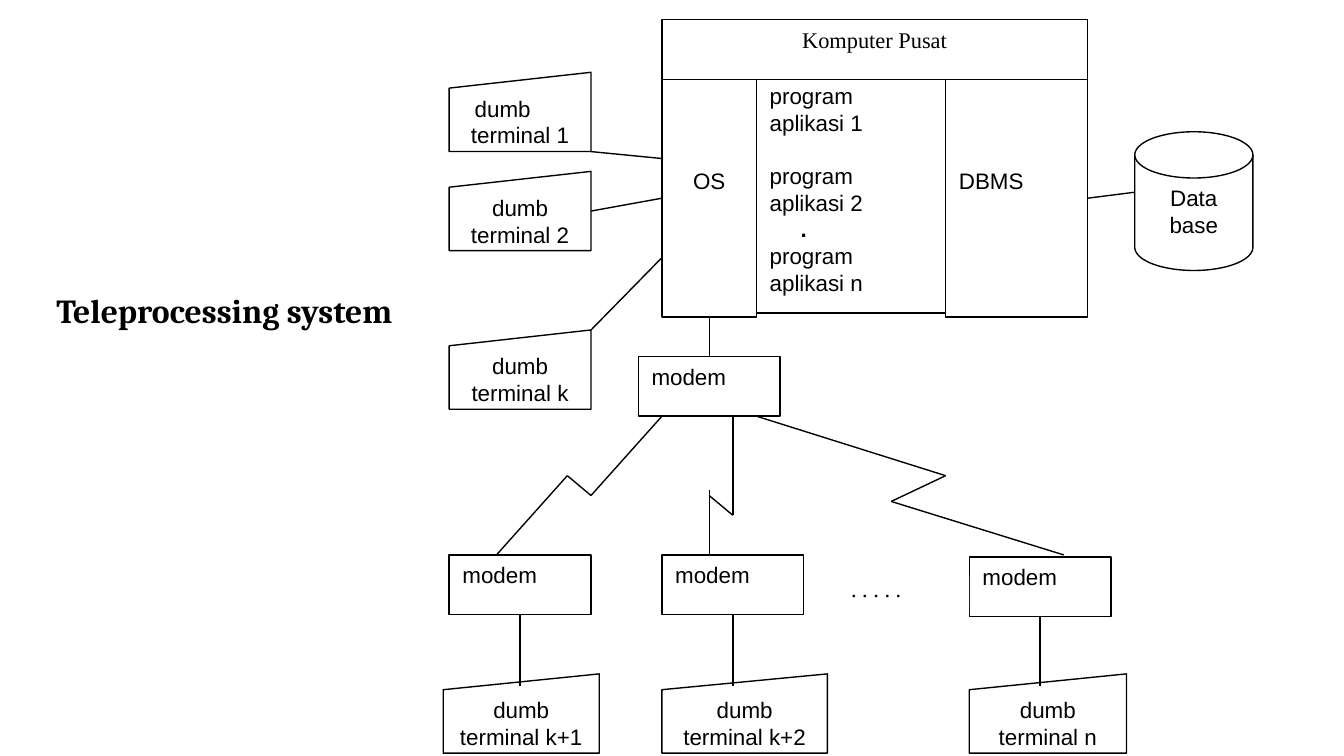
"""Build the teleprocessing system diagram slide."""
from lxml.etree import SubElement
from pptx import Presentation
from pptx.dml.color import RGBColor as RGB
from pptx.enum.shapes import MSO_CONNECTOR as CONN, MSO_SHAPE as SHAPE
from pptx.enum.text import MSO_ANCHOR as ANCHOR, PP_ALIGN as ALIGN
from pptx.oxml.ns import qn
from pptx.util import Inches, Pt

WIDTH = Inches(10)
HEIGHT = WIDTH * 9 // 16
COL, ROW = WIDTH / 56.85, HEIGHT / 38.14
COLORS = {"ink": "000000", "paper": "FFFFFF"}
TOP, LEFT, BOTTOM, RIGHT = range(4)


def color(name):
    """Return the named colour."""
    return RGB.from_string(COLORS[name])


def place(col, row):
    """Turn a grid position into slide lengths."""
    return round(col * COL), round(row * ROW)


def write(tf, lines, font="Arial", size=12, bold=False, align=ALIGN.LEFT,
          anchor=ANCHOR.TOP, insets=(0.1, 0.05), top=None, indents=None, gaps=None, bolds=()):
    """Fill a text frame; indents, gaps and bolds go by line number."""
    tf.word_wrap = True
    tf.vertical_anchor = anchor
    tf.margin_left = tf.margin_right = Inches(insets[0])
    tf.margin_top = Inches(insets[1] if top is None else top)
    tf.margin_bottom = Inches(insets[1])
    for i, line in enumerate(lines):
        p = tf.add_paragraph() if i else tf.paragraphs[0]
        p.alignment = align
        p.space_before = Pt((gaps or {}).get(i, 0))
        if i in (indents or {}):
            p.alignment = ALIGN.LEFT
            p._p.get_or_add_pPr().set("marL", str(Inches(indents[i])))
        r = p.add_run()
        r.text = line
        r.font.name, r.font.size = font, Pt(size)
        r.font.bold = bold or i in bolds
        r.font.color.rgb = color("ink")


def add_box(s, col, row, cols, rows, lines, kind=SHAPE.RECTANGLE, border=True, **style):
    """Add a white outlined shape with text on the grid."""
    sp = s.shapes.add_shape(kind, *place(col, row), *place(cols, rows))
    sp.shadow.inherit = False
    sp.fill.solid()
    sp.fill.fore_color.rgb = color("paper")
    if border:
        sp.line.color.rgb = color("ink")
        sp.line.width = Pt(0.75)
    else:
        sp.line.fill.background()
    write(sp.text_frame, lines, **style)
    return sp


def add_modem(s, col, row):
    """Add a modem box."""
    return add_box(s, col, row, 6, 3, ["modem"])


def add_terminal(s, col, row, name, cols=6, **style):
    """Add a dumb terminal."""
    return add_box(s, col, row, cols, 4, ["dumb", f"terminal {name}"],
                   SHAPE.FLOWCHART_MANUAL_INPUT, align=ALIGN.CENTER, insets=(0, 0.05), **style)


def add_line(s, start, end, begin=None, finish=None):
    """Add a straight line, joined to (shape, side) where given."""
    cn = s.shapes.add_connector(CONN.STRAIGHT, *place(*start), *place(*end))
    cn.line.color.rgb = color("ink")
    cn.line.width = Pt(0.75)
    SubElement(cn._element.spPr, qn("a:effectLst"))
    if begin:
        cn.begin_connect(*begin)
    if finish:
        cn.end_connect(*finish)


def add_zigzag(s, *points):
    """Add a broken line that stands for a remote link."""
    for start, end in zip(points, points[1:]):
        add_line(s, start, end)


def add_title(s, text):
    """Move and fill the title placeholder."""
    sp = s.shapes.title
    sp.left, sp.top, sp.width, sp.height = map(Inches, (0.25, 2.11, 2.84, 0.4))
    write(sp.text_frame, [text], font="Cambria", size=18, bold=True,
          align=ALIGN.CENTER, anchor=ANCHOR.MIDDLE)


def add_computer(s):
    """Add the central computer and return its OS and DBMS parts."""
    os_box = add_box(s, 28, 4, 4, 12, ["OS"], align=ALIGN.CENTER, top=0.65)
    dbms = add_box(s, 40, 4, 6, 12, ["DBMS"], top=0.65)
    programs = ["program", "aplikasi 1", "program", "aplikasi 2", ".", "program", "aplikasi n"]
    add_box(s, 32, 3.8, 8, 12, programs, gaps={2: 14}, indents={4: 0.23}, bolds=(4,))
    add_box(s, 28, 1, 18, 3, ["Komputer Pusat"], font="Times New Roman", align=ALIGN.CENTER)
    return os_box, dbms


def add_local_side(s, os_box, dbms):
    """Add the directly wired terminals and the database."""
    add_terminal(s, 19, 3.65, "1", indents={0: 0.19})
    second = add_terminal(s, 19, 8.65, "2")
    add_terminal(s, 19, 16.65, "k")
    add_line(s, (25, 7.65), (28, 8))
    add_line(s, (25, 10.65), (28, 10), (second, RIGHT), (os_box, LEFT))
    add_line(s, (25, 16.65), (28, 13))
    add_box(s, 48, 6.65, 5, 7, ["Data", "base"], SHAPE.FLOWCHART_MAGNETIC_DISK,
            align=ALIGN.CENTER)
    add_line(s, (46, 10), (48, 9.7), (dbms, RIGHT))


def add_remote_side(s, os_box):
    """Add the modems, their links and the remote terminals."""
    hub = add_modem(s, 27, 18)
    add_line(s, (30, 16), (30, 18), (os_box, BOTTOM), (hub, TOP))
    remotes = [(19, 28, 18.75, 6.6, "k+1"), (28, 28, 28, 7, "k+2"), (41, 28.1, 41, 6.65, "n")]
    for col, row, terminal_col, cols, name in remotes:
        modem = add_modem(s, col, row)
        add_terminal(s, terminal_col, 34, name, cols)
        add_line(s, (col + 3, row + 3), (col + 3, 34.6), (modem, BOTTOM))
    add_zigzag(s, (28, 21), (25, 25), (24, 24), (21, 28))
    add_zigzag(s, (31, 21), (31, 26), (30, 25))
    add_line(s, (30, 28), (30, 24.7))
    add_zigzag(s, (32, 21), (40, 24), (37.7, 25.3), (45, 28))
    add_box(s, 36, 29, 5, 2, [". . . . ."], border=False, font="Times New Roman", insets=(0, 0))


def main():
    """Build and save the slide."""
    prs = Presentation()
    prs.slide_width, prs.slide_height = WIDTH, HEIGHT
    s = prs.slides.add_slide(prs.slide_layouts[5])
    add_title(s, "Teleprocessing system")
    os_box, dbms = add_computer(s)
    add_local_side(s, os_box, dbms)
    add_remote_side(s, os_box)
    prs.save("out.pptx")


if __name__ == "__main__":
    main()
